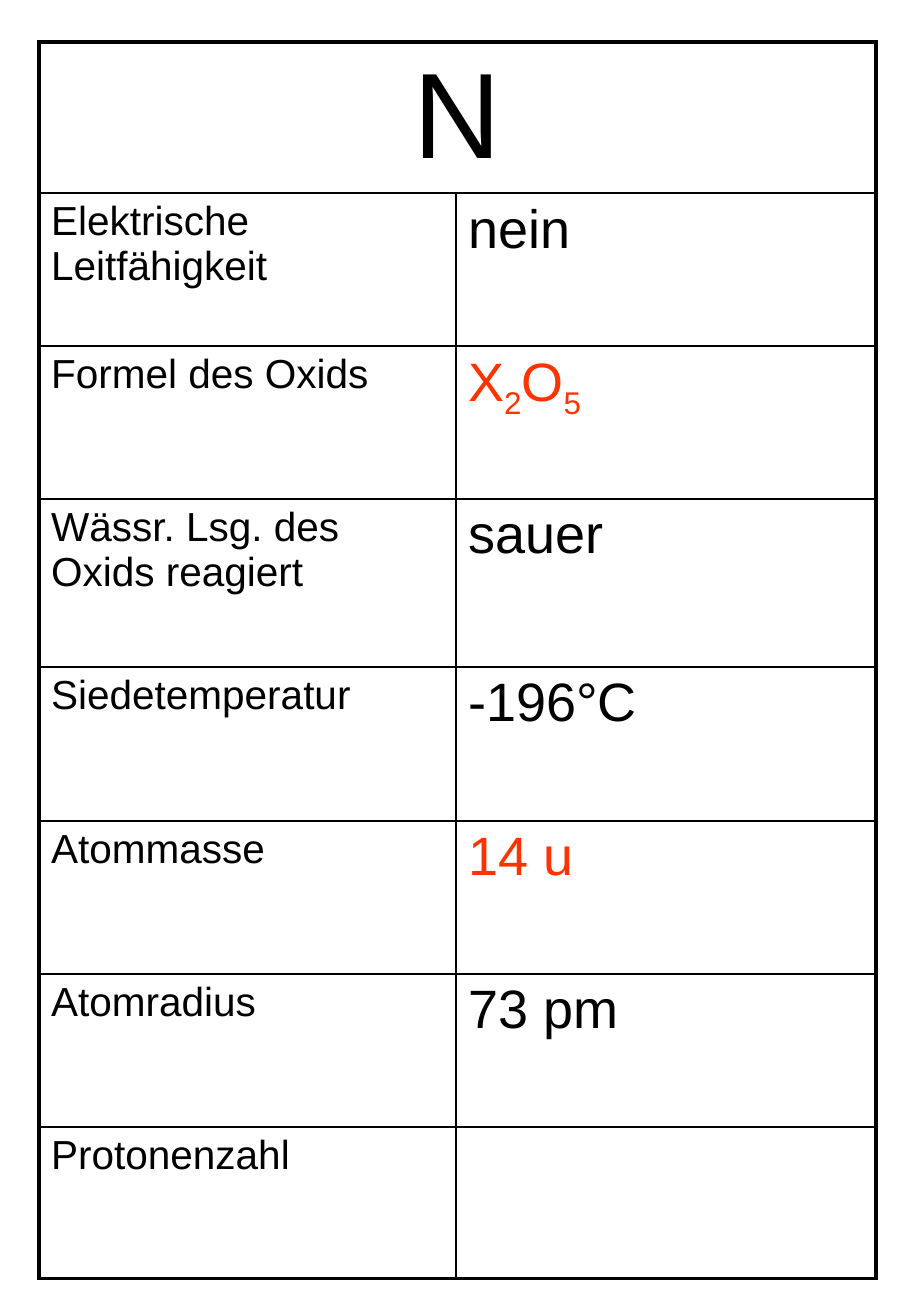
from collections import namedtuple
from lxml.etree import SubElement
from pptx import Presentation
from pptx.dml.color import RGBColor as RGB
from pptx.enum.text import PP_ALIGN as ALIGN
from pptx.oxml.ns import qn
from pptx.util import Pt

# Content: a run is (text, is_subscript)
SYMBOL = "N"
ROWS = [  # label, value runs, highlighted, row height in px
    ("Elektrische Leitfähigkeit", [("nein", False)], False, 153),
    ("Formel des Oxids",
     [("X", False), ("2", True), ("O", False), ("5", True)], True, 153),
    ("Wässr. Lsg. des Oxids reagiert", [("sauer", False)], False, 168),
    ("Siedetemperatur", [("-196°C", False)], False, 154),
    ("Atommasse", [("14 u", False)], True, 153),
    ("Atomradius", [("73 pm", False)], False, 153),
    ("Protonenzahl", [], False, 152),
]

# Theme
Theme = namedtuple("Theme", "font ink accent symbol label value frame rule")
T = Theme("Arial", "000000", "FF3300", 72, 24, 32, 2.25, 1)

# Geometry in px
LEFT, TOP, HEAD_H = 39, 42, 151
COLS = (417, 420)
HEIGHTS = [HEAD_H] + [row[3] for row in ROWS]


def px(n):
    return round(n * 914400 / 121.5)


def write(cell, runs, size, color=T.ink, align=ALIGN.LEFT):
    p = cell.text_frame.paragraphs[0]
    p.alignment = align
    p.font.size = Pt(size)
    for text, is_subscript in runs:
        r = p.add_run()
        r.text = text
        r.font.name = T.font
        r.font.size = Pt(size)
        r.font.color.rgb = RGB.from_string(color)
        if is_subscript:
            r._r.get_or_add_rPr().set("baseline", "-25000")


def border(cell, side, width):
    ln = SubElement(cell._tc.get_or_add_tcPr(), qn(f"a:ln{side}"),
                    w=str(Pt(width)))
    fill = SubElement(ln, qn("a:solidFill"))
    SubElement(fill, qn("a:srgbClr"), val=T.ink)


prs = Presentation()
prs.slide_width, prs.slide_height = px(911), px(1316)
s = prs.slides.add_slide(prs.slide_layouts[6])

# Table grid
tbl = s.shapes.add_table(len(HEIGHTS), len(COLS), px(LEFT), px(TOP),
                         px(sum(COLS)), px(sum(HEIGHTS))).table
tbl.first_row = tbl.horz_banding = False
for col, width in zip(tbl.columns, COLS):
    col.width = px(width)
for row, height in zip(tbl.rows, HEIGHTS):
    row.height = px(height)
tbl.cell(0, 0).merge(tbl.cell(0, 1))

# Heavy outer frame, thin inner rules
last_row, last_col = len(HEIGHTS) - 1, len(COLS) - 1
for i in range(len(HEIGHTS)):
    for j in range(len(COLS)):
        cell = tbl.cell(i, j)
        whole = cell.is_merge_origin
        for side, outer in (("L", j == 0), ("R", j == last_col or whole),
                            ("T", i == 0), ("B", i == last_row)):
            border(cell, side, T.frame if outer else T.rule)
        cell.fill.background()

# Text
write(tbl.cell(0, 0), [(SYMBOL, False)], T.symbol, align=ALIGN.CENTER)
for i, (label, value, highlighted, _) in enumerate(ROWS, 1):
    write(tbl.cell(i, 0), [(label, False)], T.label)
    write(tbl.cell(i, 1), value, T.value, T.accent if highlighted else T.ink)

prs.save("out.pptx")
